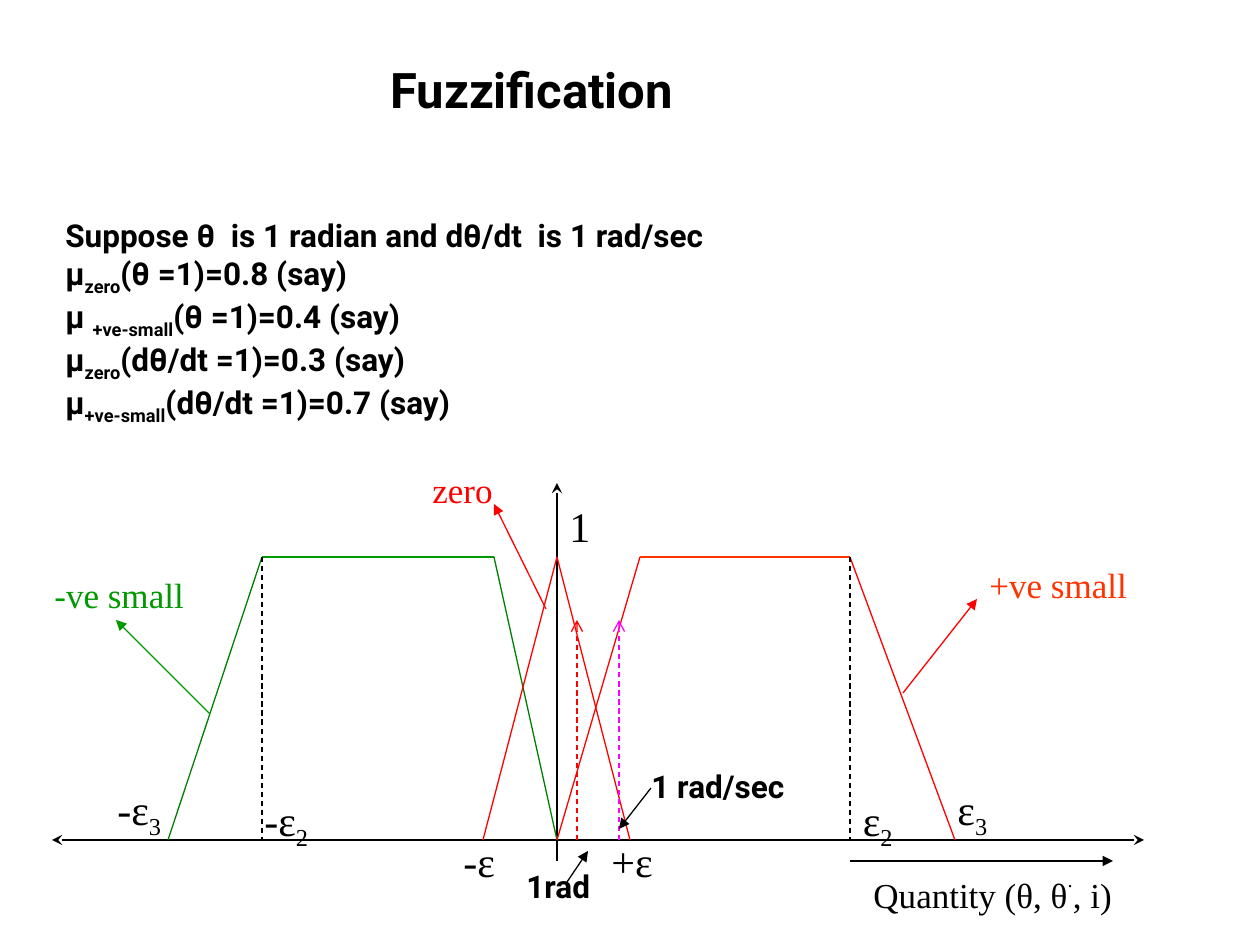
from lxml.etree import SubElement
from pptx import Presentation
from pptx.dml.color import RGBColor
from pptx.enum.dml import MSO_LINE
from pptx.enum.shapes import MSO_CONNECTOR
from pptx.enum.text import MSO_AUTO_SIZE
from pptx.oxml.ns import qn
from pptx.util import Pt

SCALE = 914400 / 126
BLACK = RGBColor(0x00, 0x00, 0x00)
RED = RGBColor(0xFF, 0x00, 0x00)
ORANGE = RGBColor(0xFF, 0x33, 0x00)
GREEN = RGBColor(0x00, 0x99, 0x00)
FOREST = RGBColor(0x00, 0x80, 0x00)
PINK = RGBColor(0xFF, 0x00, 0xFF)
SERIF = "Times New Roman"
SANS = "Roboto"
BASE, PEAK, MID = 840, 557, 557
NEG, POS = 262, 850


def px(count):
    """Turn pixels into EMU."""
    return round(count * SCALE)


def add_text(slide, text, left, top, width, height, *, size=24, font=SERIF,
             color=BLACK, bold=False, wrap=True, shift=-25):
    """Add a text box; parts between underscores leave the baseline by shift."""
    box = slide.shapes.add_textbox(px(left), px(top), px(width), px(height))
    frame = box.text_frame
    frame.word_wrap = wrap
    frame.auto_size = MSO_AUTO_SIZE.SHAPE_TO_FIT_TEXT
    for row, line in enumerate(text.split("\n")):
        para = frame.add_paragraph() if row else frame.paragraphs[0]
        for index, part in enumerate(line.split("_")):
            run = para.add_run()
            run.text = part
            run.font.name = font
            run.font.size = Pt(size)
            run.font.bold = bold
            run.font.color.rgb = color
            if index % 2:
                run._r.get_or_add_rPr().set("baseline", str(shift * 1000))


def add_line(slide, start, end, color=BLACK, *, dash=False, head=None, tail=None):
    """Add a straight line with optional dashes and arrowheads."""
    ends = [px(value) for value in (*start, *end)]
    line = slide.shapes.add_connector(MSO_CONNECTOR.STRAIGHT, *ends)
    line.line.color.rgb = color
    line.line.width = Pt(0.75)
    if dash:
        line.line.dash_style = MSO_LINE.DASH
    stroke = line.line._get_or_add_ln()
    for tag, kind in (("a:headEnd", head), ("a:tailEnd", tail)):
        if kind:
            SubElement(stroke, qn(tag)).set("type", kind)
    SubElement(line._element.spPr, qn("a:effectLst"))


def add_axes(slide):
    """Draw both axes and the arrow of the quantity."""
    add_line(slide, (52, BASE), (1144, BASE), head="stealth", tail="stealth")
    add_line(slide, (MID, 483), (MID, 861), head="stealth")
    add_line(slide, (POS, 861), (1113, 861), tail="triangle")


def add_curves(slide):
    """Draw the membership functions, their drop lines and the readings."""
    zero, low, high = (MID, BASE), (NEG, PEAK), (POS, PEAK)
    for start, end, color in (
        ((168, BASE), low, FOREST),
        (low, (494, PEAK), GREEN),
        ((494, PEAK), zero, FOREST),
        ((483, BASE), (MID, PEAK), RED),
        ((MID, PEAK), (630, BASE), RED),
        (zero, (640, PEAK), RED),
        ((640, PEAK), high, ORANGE),
        (high, (955, BASE), RED),
    ):
        add_line(slide, start, end, color)
    for left in (NEG, POS):
        add_line(slide, (left, PEAK), (left, BASE), dash=True)
    for left, color in ((619, PINK), (577, RED)):
        add_line(slide, (left, BASE), (left, 620), color, dash=True, tail="arrow")


def add_marks(slide):
    """Label the ticks on the axes."""
    for text, left, top in (
        ("-ε", 451, 829), ("+ε", 599, 829), (" ε_2_", 840, 788),
        ("-ε_2_", 252, 788), ("-ε_3_", 105, 777), ("ε_3_", 945, 777),
        ("1", MID, 494),
    ):
        add_text(slide, text, left, top, 73, 63)


def add_names(slide):
    """Name the curves and readings, with pointers."""
    for text, left, top, width, color in (
        ("+ve small", 977, 557, 199, ORANGE),
        ("-ve small", 42, 567, 199, GREEN),
        ("Quantity (θ, θ_._, i)", 861, 861, 336, BLACK),
        ("zero", 420, 462, 105, RED),
    ):
        add_text(slide, text, left, top, width, 54, size=20, color=color, shift=60)
    for text, left, top, width in (("1rad", 514, 861, 92), ("1 rad/sec", 639, 761, 161)):
        add_text(slide, text, left, top, width, 50, size=18, font=SANS, bold=True,
                 wrap=False)
    for start, end, color in (
        ((903, 693), (977, 599), RED), ((210, 714), (116, 620), GREEN),
        ((546, 609), (494, 504), RED), ((651, 788), (619, 829), BLACK),
        ((567, 882), (588, 851), BLACK),
    ):
        add_line(slide, start, end, color, tail="triangle")


def main():
    """Build the slide and save it."""
    deck = Presentation()
    deck.slide_width, deck.slide_height = px(1260), px(945)
    slide = deck.slides.add_slide(deck.slide_layouts[6])
    add_text(slide, "Fuzzification", 378, 53, 323, 72, size=28, font=SANS,
             bold=True, wrap=False)
    facts = [
        "Suppose θ  is 1 radian and dθ/dt  is 1 rad/sec",
        "μ_zero_(θ =1)=0.8 (say)",
        "μ _+ve-small_(θ =1)=0.4 (say)",
        "μ_zero_(dθ/dt =1)=0.3 (say)",
        "μ_+ve-small_(dθ/dt =1)=0.7 (say)",
    ]
    add_text(slide, "\n".join(facts), 53, 210, 1134, 239, size=18, font=SANS, bold=True)
    add_axes(slide)
    add_curves(slide)
    add_marks(slide)
    add_names(slide)
    deck.save("out.pptx")


if __name__ == "__main__":
    main()
